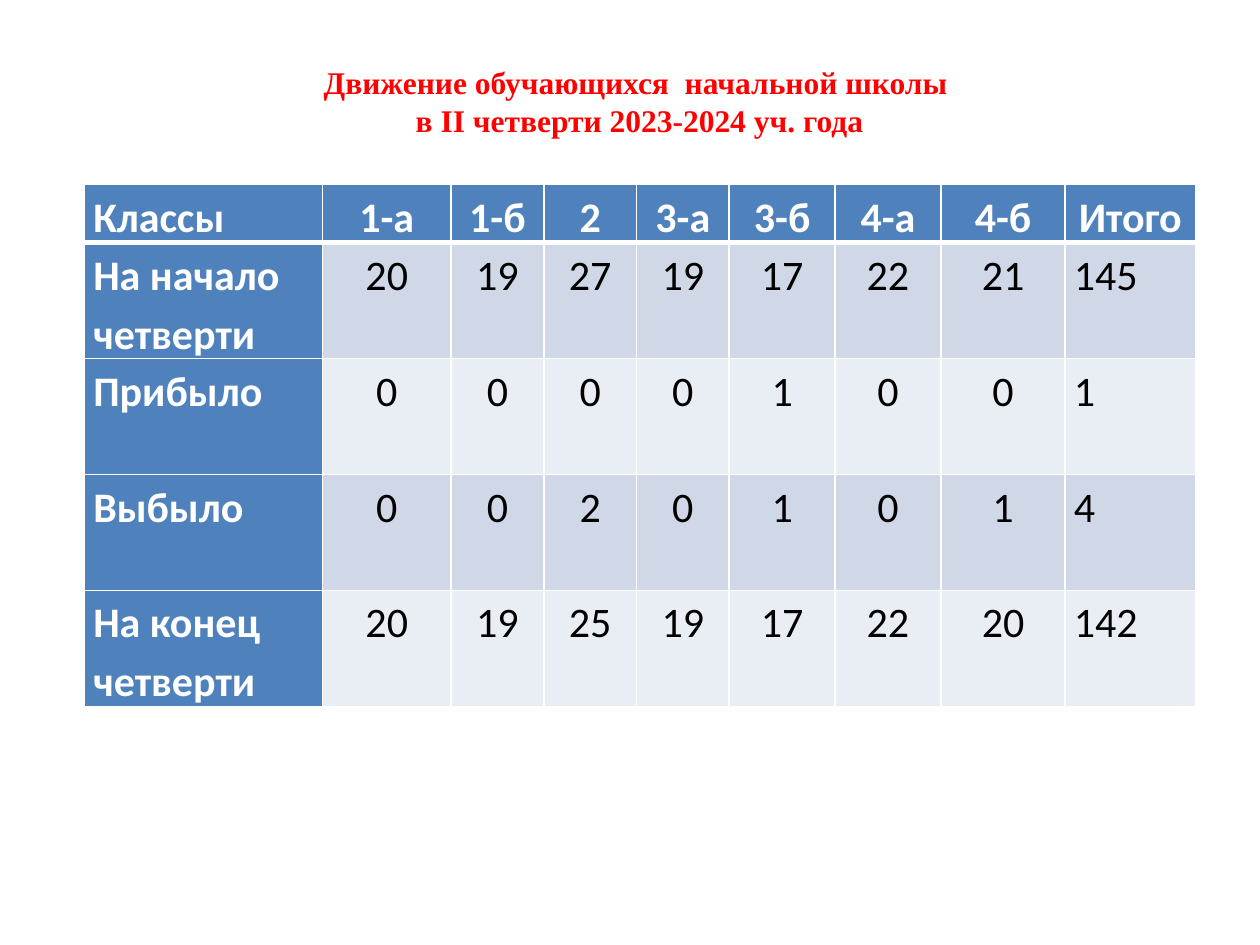
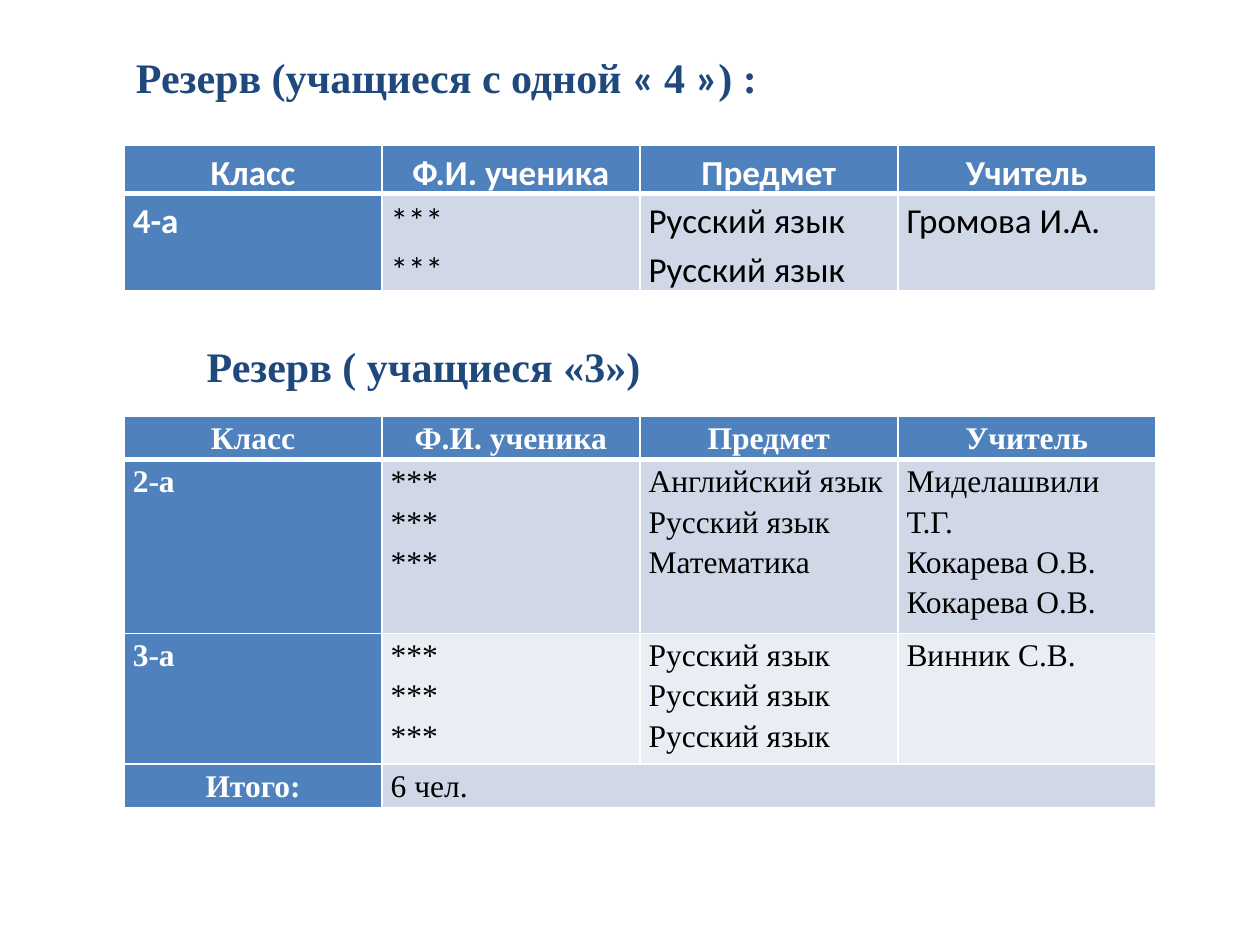
from dataclasses import dataclass

from lxml import etree
from pptx import Presentation
from pptx.dml.color import RGBColor
from pptx.enum.text import MSO_AUTO_SIZE, PP_ALIGN
from pptx.oxml.ns import qn
from pptx.slide import Slide
from pptx.table import _Cell
from pptx.util import Pt

LEFT, CENTER = PP_ALIGN.LEFT, PP_ALIGN.CENTER
FIT_SHAPE = MSO_AUTO_SIZE.SHAPE_TO_FIT_TEXT
SERIF, SANS = "Times New Roman", "Calibri"
COLORS = {
    "white": "FFFFFF",
    "black": "000000",
    "red": "FF0000",
    "navy": "1F497D",
    "header": "4F81BD",
    "band_dark": "D0D8E8",
    "band_light": "E9EDF4",
}
CELL_MARGIN = 5
THIN, THICK = 1, 3
BORDER_SIDES = ("lnL", "lnR", "lnT", "lnB")


@dataclass(frozen=True)
class Heading:
    left: float
    top: float
    width: float
    height: float
    lines: tuple[tuple[tuple[str, str], ...], ...]  # (text, font) pieces of each line
    size: float = 24
    color: str = "navy"
    align: PP_ALIGN = LEFT
    wrap: bool = False


@dataclass(frozen=True)
class Grid:
    left: float
    top: float
    columns: tuple[float, ...]
    row_heights: tuple[float, ...]
    rows: tuple[tuple[str, ...], ...]
    font: str
    size: float
    centered_columns: range = range(0)
    has_total: bool = False


def rgb(name: str) -> RGBColor:
    return RGBColor.from_string(COLORS[name])


def add_heading(slide: Slide, heading: Heading) -> None:
    box = slide.shapes.add_textbox(
        Pt(heading.left), Pt(heading.top), Pt(heading.width), Pt(heading.height))
    frame = box.text_frame
    frame.word_wrap = heading.wrap
    frame.auto_size = FIT_SHAPE
    for index, pieces in enumerate(heading.lines):
        paragraph = frame.add_paragraph() if index else frame.paragraphs[0]
        paragraph.alignment = heading.align
        for text, font_name in pieces:
            run = paragraph.add_run()
            run.text = text
            run.font.name = font_name
            run.font.size = Pt(heading.size)
            run.font.bold = True
            run.font.color.rgb = rgb(heading.color)


def set_borders(cell: _Cell, row: int) -> None:
    """Draw white cell edges, with a thick rule under the header row."""
    properties = cell._tc.get_or_add_tcPr()
    for position, side in enumerate(BORDER_SIDES):
        under_header = (row, side) in ((0, "lnB"), (1, "lnT"))
        line = etree.Element(qn(f"a:{side}"), w=str(Pt(THICK if under_header else THIN)))
        fill = etree.SubElement(line, qn("a:solidFill"))
        etree.SubElement(fill, qn("a:srgbClr"), val=COLORS["white"])
        properties.insert(position, line)


def fill_cell(cell: _Cell, grid: Grid, row: int, column: int) -> None:
    values = grid.rows[row]
    is_label = row == 0 or column == 0
    is_total_label = grid.has_total and row == len(grid.rows) - 1 and column == 0
    # The serif and sans tables centre every header but the wide label column.
    is_centered_header = row == 0 and (column > 0 or not grid.centered_columns)
    centered = is_centered_header or is_total_label or (
        column in grid.centered_columns)

    cell.margin_left = cell.margin_right = Pt(CELL_MARGIN)
    cell.margin_top = cell.margin_bottom = Pt(0)
    cell.fill.solid()
    band = "band_dark" if row % 2 else "band_light"
    cell.fill.fore_color.rgb = rgb("header" if is_label else band)
    set_borders(cell, row)
    if column >= len(values):
        return
    cell.text_frame.text = values[column]
    for paragraph in cell.text_frame.paragraphs:
        paragraph.alignment = CENTER if centered else LEFT
        paragraph.line_spacing = 1.15
        for run in paragraph.runs:
            run.font.name = grid.font
            run.font.size = Pt(grid.size)
            run.font.bold = is_label
            run.font.color.rgb = rgb("white" if is_label else "black")


def add_grid(slide: Slide, grid: Grid) -> None:
    table = slide.shapes.add_table(
        len(grid.rows), len(grid.columns), Pt(grid.left), Pt(grid.top),
        Pt(sum(grid.columns)), Pt(sum(grid.row_heights))).table
    for column, width in zip(table.columns, grid.columns):
        column.width = Pt(width)
    for row, height in zip(table.rows, grid.row_heights):
        row.height = Pt(height)
    for row in range(len(grid.rows)):
        for column in range(len(grid.columns)):
            fill_cell(table.cell(row, column), grid, row, column)
    if grid.has_total:
        last = len(grid.rows) - 1
        table.cell(last, 1).merge(table.cell(last, len(grid.columns) - 1))


MOVEMENT_HEADING = Heading(
    116, 32.4, 499, 51,
    ((("Движение обучающихся  начальной школы ", SERIF),),
     (("в II четверти 2023-2024 уч. года", SERIF),)),
    size=18, color="red", align=CENTER, wrap=True)
MOVEMENT = Grid(
    48.3, 105.5,
    (136, 73.5, 53, 53, 53, 60.5, 60.5, 71, 74.5),
    (33.1,) + (66.25,) * 4,
    (
        ("Классы", "1-а", "1-б", "2", "3-а", "3-б", "4-а", "4-б", "Итого"),
        ("На начало четверти", "20", "19", "27", "19", "17", "22", "21", "145"),
        ("Прибыло", "0", "0", "0", "0", "1", "0", "0", "1"),
        ("Выбыло", "0", "0", "2", "0", "1", "0", "1", "4"),
        ("На конец четверти", "20", "19", "25", "19", "17", "22", "20", "142"),
    ),
    SANS, 24, centered_columns=range(1, 8))

RESERVE_LEFT = 70.9
RESERVE_COLUMNS = (147.4,) * 4
RESERVE_HEADER = ("Класс", "Ф.И. ученика", "Предмет", "Учитель")
ONE_FOUR_HEADING = Heading(
    70.6, 26, 379, 36,
    ((("Резерв (учащиеся с одной ", SERIF), ("« ", SANS), ("4 ", SERIF),
      ("»", SANS), (") :", SERIF)),))
ONE_FOUR = Grid(
    RESERVE_LEFT, 83, RESERVE_COLUMNS, (27.6, 55.2),
    (
        RESERVE_HEADER,
        ("4-а", "***\n***", "Русский язык\nРусский язык", "Громова И.А."),
    ),
    SANS, 20)
THREES_HEADING = Heading(
    111, 190.8, 265, 36, ((("Резерв ( учащиеся «3»)", SERIF),),))
THREES = Grid(
    RESERVE_LEFT, 237.8, RESERVE_COLUMNS, (24.8, 99.4, 74.4, 24.8),
    (
        RESERVE_HEADER,
        ("2-а", "***\n***\n***", "Английский язык\nРусский язык\nМатематика",
         "Миделашвили Т.Г.\nКокарева О.В.\nКокарева О.В."),
        ("3-а", "***\n***\n***", "Русский язык\nРусский язык\nРусский язык",
         "Винник С.В."),
        ("Итого:", "6 чел."),
    ),
    SERIF, 18, has_total=True)

SLIDES = (
    ((MOVEMENT_HEADING, MOVEMENT),),
    ((ONE_FOUR_HEADING, ONE_FOUR), (THREES_HEADING, THREES)),
)


def main() -> None:
    deck = Presentation()
    deck.slide_width, deck.slide_height = Pt(720), Pt(540)
    for sections in SLIDES:
        slide = deck.slides.add_slide(deck.slide_layouts[6])
        for heading, grid in sections:
            add_heading(slide, heading)
            add_grid(slide, grid)
    deck.save("out.pptx")


if __name__ == "__main__":
    main()
